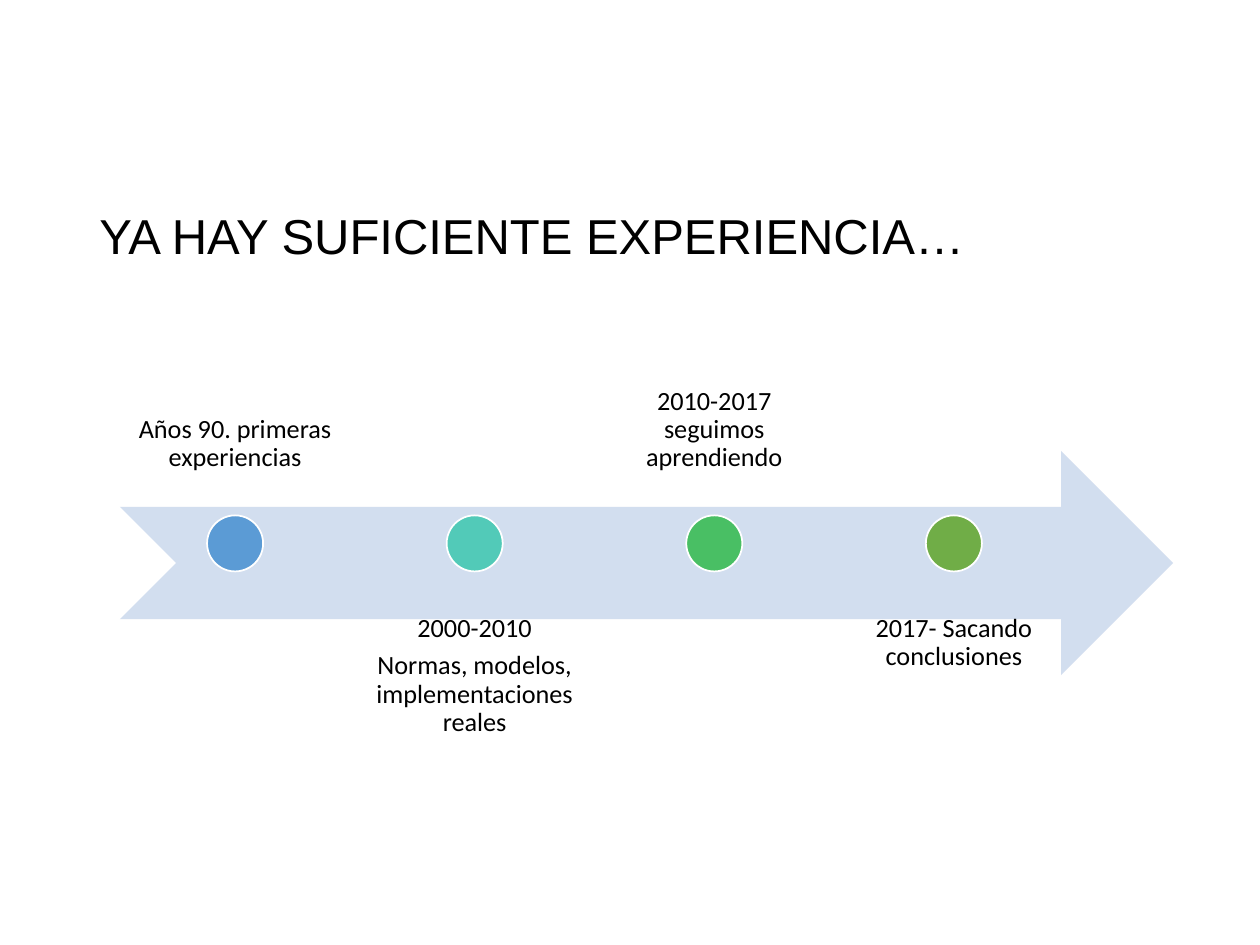
from pptx import Presentation
from pptx.dml.color import RGBColor
from pptx.enum.shapes import MSO_SHAPE
from pptx.enum.text import MSO_ANCHOR, PP_ALIGN
from pptx.util import Cm, Pt

ARROW, DOT = MSO_SHAPE.NOTCHED_RIGHT_ARROW, MSO_SHAPE.OVAL
TOP, MIDDLE, BOTTOM = MSO_ANCHOR.TOP, MSO_ANCHOR.MIDDLE, MSO_ANCHOR.BOTTOM
LEFT, CENTER = PP_ALIGN.LEFT, PP_ALIGN.CENTER

TITLE = "YA HAY SUFICIENTE EXPERIENCIA…"
MILESTONES = [
    (["Años 90. primeras experiencias"], "5B9BD5"),
    (["2000-2010", "Normas, modelos, implementaciones reales"], "52CAB8"),
    (["2010-2017 seguimos aprendiendo"], "49BF64"),
    (["2017- Sacando conclusiones"], "70AD47"),
]
THEME = {
    "text": "000000", "arrow": "D2DEEF", "outline": "FFFFFF",
    "title_font": "Arial", "title_size": 28,
    "label_font": "Calibri", "label_size": 15,
}

FIRST_LEFT, PITCH = 2.44, 4.83
LABEL_WIDTH, BAND_HEIGHT = 4.6, 4.52
ABOVE_TOP, ARROW_TOP, BELOW_TOP = 5.31, 9.09, 12.09
DOT_SIZE, DOT_TOP = 1.13, 10.39
INSET = 0.3


def color(name):
    return RGBColor.from_string(name)


def write(frame, lines, role, align, anchor):
    frame.word_wrap = True
    frame.vertical_anchor = anchor
    for index, line in enumerate(lines):
        para = frame.add_paragraph() if index else frame.paragraphs[0]
        para.text = line
        para.alignment = align
        para.line_spacing = 0.9
        para.font.name = THEME[role + "_font"]
        para.font.size = Pt(THEME[role + "_size"])
        para.font.color.rgb = color(THEME["text"])


def add_filled(page, kind, bounds, fill):
    shape = page.shapes.add_shape(kind, *map(Cm, bounds))
    shape.shadow.inherit = False
    shape.fill.solid()
    shape.fill.fore_color.rgb = color(fill)
    shape.line.fill.background()
    return shape


def add_milestone(page, index, lines, fill):
    left = FIRST_LEFT + index * PITCH
    above = index % 2 == 0
    top = ABOVE_TOP if above else BELOW_TOP
    box = page.shapes.add_textbox(*map(Cm, (left, top, LABEL_WIDTH, BAND_HEIGHT)))
    frame = box.text_frame
    frame.margin_left = frame.margin_right = Cm(INSET)
    frame.margin_top = frame.margin_bottom = Cm(INSET)
    write(frame, lines, "label", CENTER, BOTTOM if above else TOP)
    for para in frame.paragraphs:
        para.space_after = Pt(0.35 * THEME["label_size"])

    dot_left = left + (LABEL_WIDTH - DOT_SIZE) / 2
    dot = add_filled(page, DOT, (dot_left, DOT_TOP, DOT_SIZE, DOT_SIZE), fill)
    dot.line.color.rgb = color(THEME["outline"])
    dot.line.width = Pt(1)


def main():
    deck = Presentation()
    deck.slide_width, deck.slide_height = Cm(25.4), Cm(19.05)
    page = deck.slides.add_slide(deck.slide_layouts[5])
    title = page.shapes.title
    title.left, title.top, title.width, title.height = map(Cm, (1.75, 3.56, 21.9, 2.49))
    write(title.text_frame, [TITLE], "title", LEFT, MIDDLE)
    add_filled(page, ARROW, (2.42, ARROW_TOP, 21.23, BAND_HEIGHT), THEME["arrow"])
    for index, (lines, fill) in enumerate(MILESTONES):
        add_milestone(page, index, lines, fill)
    deck.save("out.pptx")


if __name__ == "__main__":
    main()
